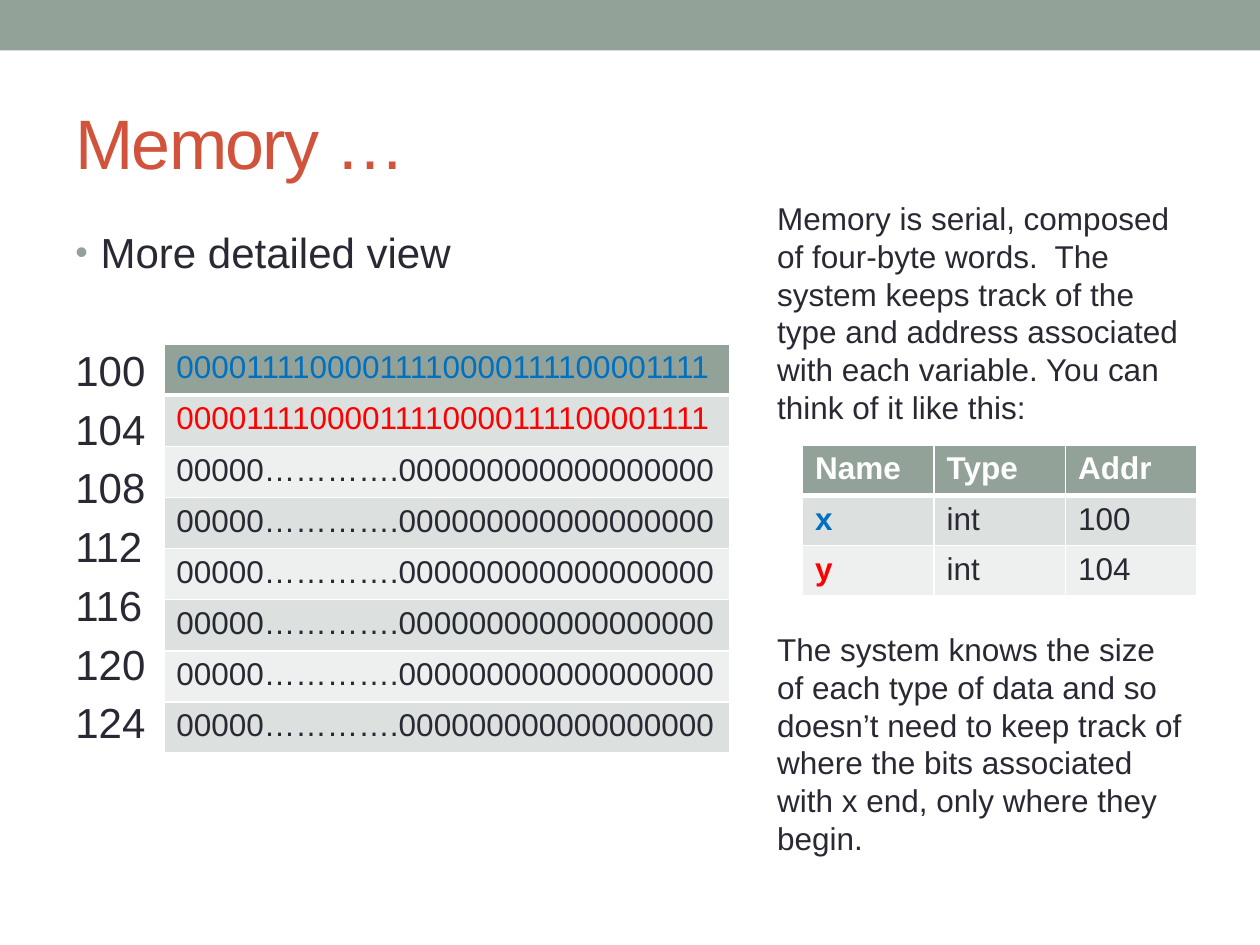
from dataclasses import dataclass

from lxml import etree
from pptx import Presentation
from pptx.dml.color import RGBColor
from pptx.enum.shapes import MSO_SHAPE
from pptx.enum.text import MSO_ANCHOR
from pptx.oxml.ns import qn
from pptx.util import Inches, Pt

RECTANGLE = MSO_SHAPE.RECTANGLE
TOP, MIDDLE = MSO_ANCHOR.TOP, MSO_ANCHOR.MIDDLE


@dataclass(frozen=True)
class Theme:
    font: str = "Arial"
    sage: str = "93A299"
    title_color: str = "D2533C"
    ink: str = "292934"
    white: str = "FFFFFF"
    blue: str = "0070C0"
    red: str = "FF0000"
    bands: tuple = ("DCE0DE", "EEF0EF")
    title_size: int = 40
    body_size: int = 24
    small_size: int = 18
    body_gap: float = 4.8


class SlideBuilder:
    def __init__(self, slide, theme):
        self.slide = slide
        self.theme = theme

    def format_runs(self, paragraph, size, color, bold=False):
        for run in paragraph.runs:
            run.font.name = self.theme.font
            run.font.size = Pt(size)
            run.font.bold = bold
            run.font.color.rgb = RGBColor.from_string(color)

    def bar(self, left, top, width, height):
        shape = self.slide.shapes.add_shape(
            RECTANGLE, Inches(left), Inches(top), Inches(width), Inches(height))
        shape.shadow.inherit = False
        shape.fill.solid()
        shape.fill.fore_color.rgb = RGBColor.from_string(self.theme.sage)
        shape.line.fill.background()

    def text(self, box, lines, size, color, anchor=TOP, gap=0):
        """Add a wrapped text box and return its paragraphs."""
        shape = self.slide.shapes.add_textbox(*map(Inches, box))
        text_frame = shape.text_frame
        text_frame.word_wrap = True
        text_frame.vertical_anchor = anchor
        text_frame.text = "\n".join(lines)
        for paragraph in text_frame.paragraphs:
            paragraph.space_before = Pt(gap)
            self.format_runs(paragraph, size, color)
        return text_frame.paragraphs

    def bullet(self, paragraph, indent):
        properties = paragraph._p.get_or_add_pPr()
        properties.set("marL", str(Inches(indent)))
        properties.set("indent", str(-Inches(indent)))
        bullet_color = etree.SubElement(properties, qn("a:buClr"))
        etree.SubElement(bullet_color, qn("a:srgbClr"), val=self.theme.sage)
        etree.SubElement(properties, qn("a:buSzPct"), val="85000")
        etree.SubElement(properties, qn("a:buFont"), typeface=self.theme.font)
        etree.SubElement(properties, qn("a:buChar"), char="•")

    def borders(self, cell, top_width, bottom_width):
        properties = cell._tc.get_or_add_tcPr()
        widths = {"a:lnL": 1, "a:lnR": 1, "a:lnT": top_width, "a:lnB": bottom_width}
        for position, (tag, width) in enumerate(widths.items()):
            line = etree.Element(qn(tag), w=str(Pt(width)))
            fill = etree.SubElement(line, qn("a:solidFill"))
            etree.SubElement(fill, qn("a:srgbClr"), val=self.theme.white)
            properties.insert(position, line)

    def table(self, box, rows, style_of):
        """Add a banded table; style_of(row, column) gives text colour and bold."""
        theme = self.theme
        table = self.slide.shapes.add_table(
            len(rows), len(rows[0]), *map(Inches, box)).table
        for row, values in enumerate(rows):
            fill = theme.bands[(row - 1) % 2] if row else theme.sage
            for column, value in enumerate(values):
                cell = table.cell(row, column)
                cell.text = value
                cell.fill.solid()
                cell.fill.fore_color.rgb = RGBColor.from_string(fill)
                color, bold = style_of(row, column)
                self.format_runs(cell.text_frame.paragraphs[0],
                                 theme.small_size, color, bold)
                self.borders(cell, 3 if row == 1 else 1, 1 if row else 3)


def main():
    theme = Theme()
    presentation = Presentation()
    presentation.slide_width, presentation.slide_height = Inches(10), Inches(7.5)
    slide = presentation.slides.add_slide(presentation.slide_layouts[6])
    builder = SlideBuilder(slide, theme)

    builder.bar(0, 0, 10, 0.4)
    title = builder.text((0.5, 0.58, 9, 1.08), ["Memory …"],
                         theme.title_size, theme.title_color, MIDDLE)[0]
    title.runs[0].font._element.set("spc", "-100")

    addresses = [str(address) for address in range(100, 125, 4)]
    body = builder.text((0.5, 1.75, 9, 5.33), ["More detailed view", *addresses],
                        theme.body_size, theme.ink, gap=theme.body_gap)
    builder.bullet(body[0], 0.2)
    # The first address sits one full line lower, level with the memory table.
    body[1].space_before = Pt(2 * theme.body_gap + 1.2 * theme.body_size)

    builder.text(
        (6.07, 1.53, 3.57, 1.92),
        ["Memory is serial, composed of four-byte words.  The system keeps track "
         "of the type and address associated with each variable. You can think "
         "of it like this:"],
        theme.small_size, theme.ink)

    variable_colors = [theme.blue, theme.red]
    words = ["00001111" * 4] * 2 + ["00000………….000000000000000000"] * 6
    word_colors = variable_colors + [theme.ink] * 6
    builder.table((1.3, 2.73, 4.49, 3.25), [[word] for word in words],
                  lambda row, column: (word_colors[row], False))

    def variable_style(row, column):
        if row == 0:
            return theme.white, True
        if column == 0:
            return variable_colors[row - 1], True
        return theme.ink, False

    variables = [["Name", "Type", "Addr"], ["x", "int", "100"], ["y", "int", "104"]]
    builder.table((6.37, 3.53, 3.13, 1.2), variables, variable_style)

    builder.text(
        (6.07, 4.95, 3.43, 1.92),
        ["The system knows the size of each type of data and so doesn’t need to "
         "keep track of where the bits associated with x end, only where they "
         "begin."],
        theme.small_size, theme.ink)

    presentation.save("out.pptx")


if __name__ == "__main__":
    main()
